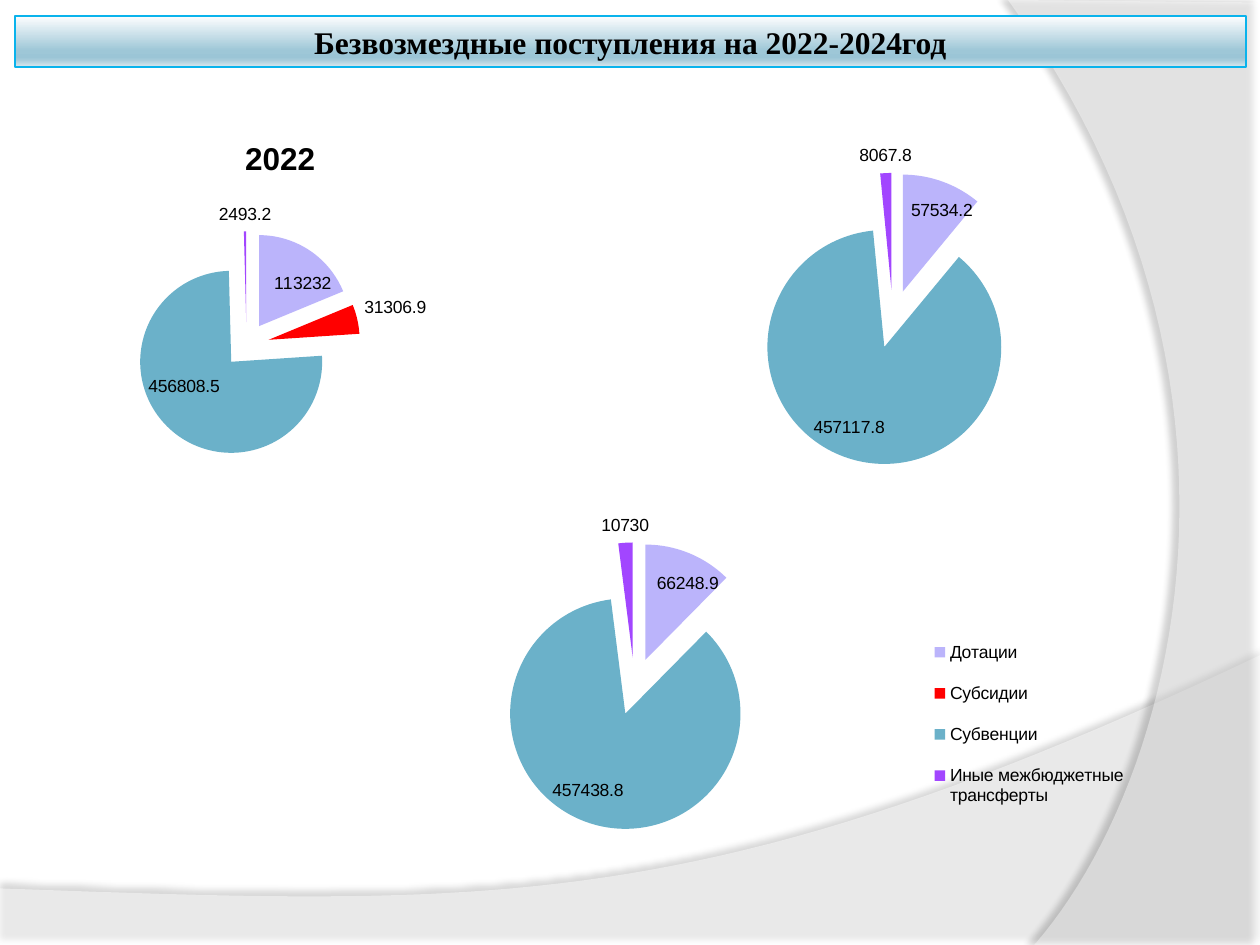
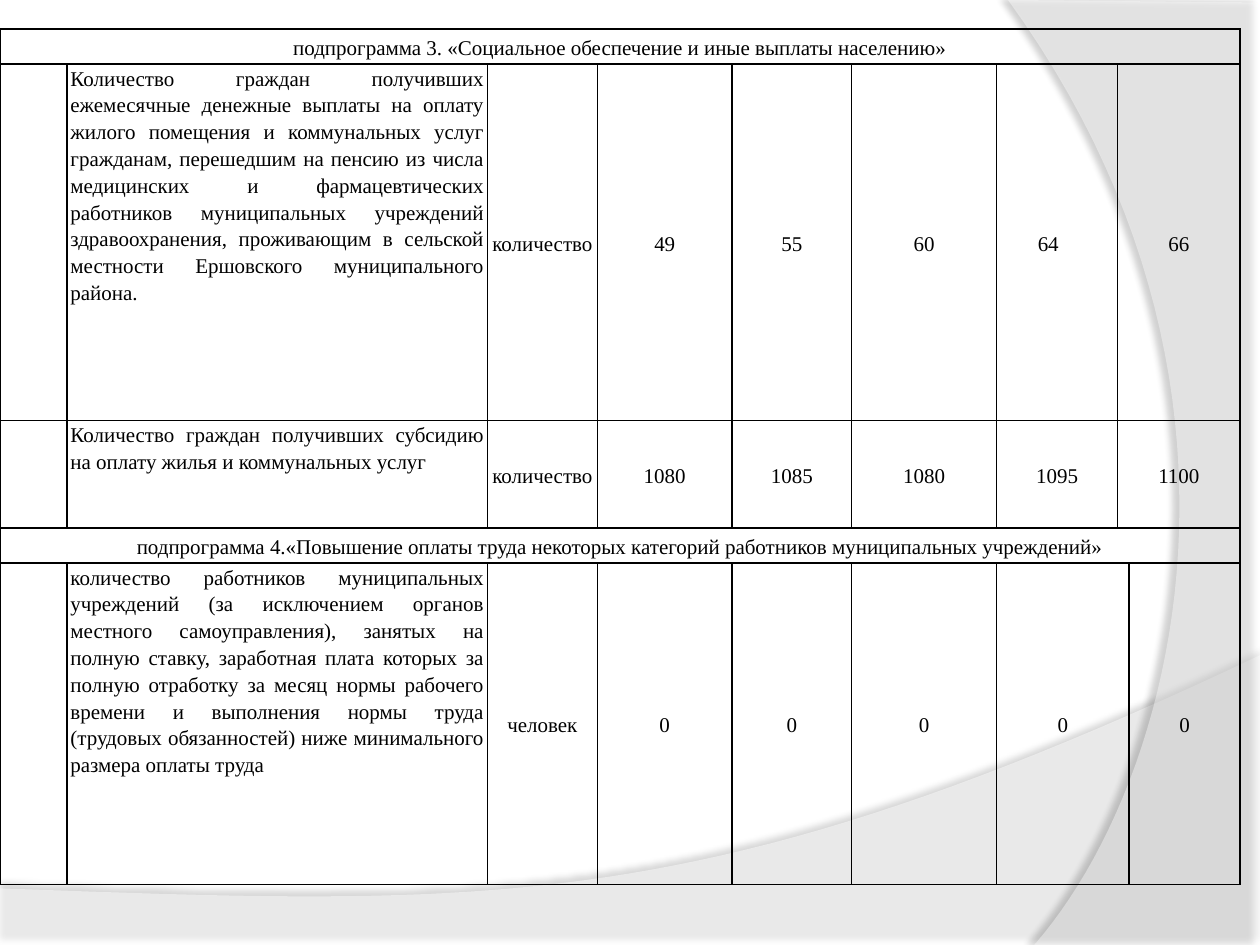
from lxml import etree
from pptx import Presentation
from pptx.chart.data import CategoryChartData
from pptx.dml.color import RGBColor
from pptx.enum.chart import XL_CHART_TYPE as ChartType
from pptx.enum.chart import XL_LABEL_POSITION as LabelPos
from pptx.enum.chart import XL_LEGEND_POSITION as LegendPos
from pptx.enum.text import MSO_ANCHOR as Anchor
from pptx.enum.text import MSO_AUTO_SIZE as AutoSize
from pptx.enum.text import PP_ALIGN as Align
from pptx.oxml import parse_xml
from pptx.oxml.ns import nsdecls, qn
from pptx.util import Cm, Pt

# Shared look
SERIF, SANS = "Times New Roman", "Arial"
BLACK, WHITE, TITLE_LINE = "000000", "FFFFFF", "0AB3EC"
TITLE_STOPS = [(0, "FEFEFF"), (68, "9EC7D7"), (81, "9BC5D6"),
               (86, "A5CAD9"), (100, "DAE8EE")]
SLICE_COLOURS = ["BBB4FB", "FF0000", "6BB1C9", "A246FF"]


def rgb(value):
    return RGBColor.from_string(value)


def style_font(font, name, size, bold=False):
    font.name, font.size, font.bold = name, Pt(size), bold
    font.color.rgb = rgb(BLACK)


# Background waves
def bezier(p0, p1, p2, p3, steps=48):
    """Points along a cubic curve, without its start."""
    points = []
    for i in range(1, steps + 1):
        t = i / steps
        weights = ((1 - t) ** 3, 3 * t * (1 - t) ** 2, 3 * t * t * (1 - t), t ** 3)
        points.append(tuple(sum(w * p[axis] for w, p in zip(weights, (p0, p1, p2, p3)))
                            for axis in (0, 1)))
    return points


def add_wave(prs, s, left, top, corners, curve, opacity, shadow):
    """Outline of corners and one curve, in cm from (left, top), kept on the master."""
    points = [(Cm(x), Cm(y)) for x, y in corners + bezier(corners[-1], *curve)]
    builder = s.shapes.build_freeform(*points[0])
    builder.add_line_segments(points[1:], close=True)
    sp = builder.convert_to_shape(Cm(left), Cm(top))
    sp.fill.solid()
    sp.fill.fore_color.rgb = rgb(WHITE)
    sp.line.fill.background()
    spPr = sp.element.spPr
    colour = spPr.find(qn("a:solidFill")).find(qn("a:srgbClr"))
    etree.SubElement(colour, qn("a:alpha")).set("val", str(opacity * 1000))
    alpha, distance, angle = shadow
    spPr.append(parse_xml(
        f'<a:effectLst {nsdecls("a")}><a:outerShdw blurRad="{Pt(4)}" dist="{Pt(distance)}" '
        f'dir="{angle * 60000}" algn="ctr" rotWithShape="0"><a:srgbClr val="{BLACK}">'
        f'<a:alpha val="{alpha * 1000}"/></a:srgbClr></a:outerShdw></a:effectLst>'))
    tree = prs.slide_master.shapes.element
    sp.element.nvSpPr.cNvPr.id = 100 + len(tree)
    tree.append(sp.element)


def add_background(prs, s):
    add_wave(prs, s, 0, 13.21, [(0, 4.7), (0, 5.86), (25.4, 5.86), (25.4, 0)],
             [(14.2, 5.31), (9.93, 5.05), (0, 4.7)], 45, (35, 3.5, 270))
    add_wave(prs, s, 20.32, 0, [(5.08, 0.05), (5.08, 19.05), (0.53, 19.05)],
             [(3.43, 15.72), (5.54, 7.62), (0, 0)], 40, (45, 4, 180))


# Title band
def format_title(s, text, left, top, width, height):
    title = s.shapes.title
    title.left, title.top, title.width, title.height = map(Cm, (left, top, width, height))
    title.fill.gradient()
    title.fill.gradient_angle = 270
    stops = title.element.spPr.find(qn("a:gradFill")).find(qn("a:gsLst"))
    stops.clear()
    for position, colour in TITLE_STOPS:
        stops.append(parse_xml(f'<a:gs {nsdecls("a")} pos="{position * 1000}">'
                               f'<a:srgbClr val="{colour}"/></a:gs>'))
    title.line.color.rgb = rgb(TITLE_LINE)
    title.line.width = Pt(0.75)
    title.shadow.inherit = False
    tf = title.text_frame
    tf.auto_size, tf.vertical_anchor = AutoSize.NONE, Anchor.MIDDLE
    tf.text = text
    p = tf.paragraphs[0]
    p.alignment = Align.CENTER
    style_font(p.runs[0].font, SERIF, 18, bold=True)


# Pie charts
def manual_layout(x, y, w, h, target=""):
    return parse_xml(
        f'<c:layout {nsdecls("c")}><c:manualLayout>{target}'
        '<c:xMode val="edge"/><c:yMode val="edge"/>'
        f'<c:x val="{x}"/><c:y val="{y}"/><c:w val="{w}"/><c:h val="{h}"/>'
        '</c:manualLayout></c:layout>')


def add_pie(s, box, values, categories=("1", "2", "3", "4"), name="Series 1", title=None):
    data = CategoryChartData()
    data.categories = categories
    data.add_series(name, values)
    chart = s.shapes.add_chart(ChartType.PIE, *map(Cm, box), data).chart
    style_font(chart.font, SANS, 10)
    chart.has_legend = False
    chart.has_title = title is not None
    if title:
        tf = chart.chart_title.text_frame
        tf.text = title
        style_font(tf.paragraphs[0].runs[0].font, SANS, 18, bold=True)
    plot = chart.plots[0]
    plot.vary_by_categories = True
    series = plot.series[0]
    for i, colour in enumerate(SLICE_COLOURS):
        fill = series.points[i].format.fill
        fill.solid()
        fill.fore_color.rgb = rgb(colour)
    explosion = parse_xml(f'<c:explosion {nsdecls("c")} val="25"/>')
    series._element.find(qn("c:tx")).addnext(explosion)
    plot.has_data_labels = True
    labels = plot.data_labels
    labels.show_value = True
    labels.show_percentage = False
    labels.position = LabelPos.BEST_FIT
    style_font(labels.font, SANS, 10)
    return chart


def add_legend(chart):
    """Legend at the right, with fixed places for the legend and the pie."""
    chart.has_legend = True
    chart.legend.position = LegendPos.RIGHT
    chart.legend.include_in_layout = False
    style_font(chart.legend.font, SANS, 10)
    legend = chart.legend._element
    for parent, layout in (
            (legend, manual_layout(0.74, 0.37, 0.23, 0.55)),
            (chart.element.find(qn("c:chart")).find(qn("c:plotArea")),
             manual_layout(0.18, 0.16, 0.54, 0.77, '<c:layoutTarget val="inner"/>'))):
        old = parent.find(qn("c:layout"))
        if old is not None:
            parent.remove(old)
        parent.insert(1 if parent is legend else 0, layout)


def build_receipts_slide(s):
    format_title(s, "Безвозмездные поступления на 2022-2024год", 0.3, 0.32, 24.82, 1.03)
    add_pie(s, (0, 2.39, 11.3, 7.21), (113232, 31306.9, 456808.5, 2493.2),
            name="2022", title="2022")
    add_pie(s, (13.11, 2.59, 10.11, 7.14), (57534.2, 0, 457117.8, 8067.8))
    chart = add_pie(s, (3.96, 9.73, 19.63, 7.54), (66248.9, 0, 457438.8, 10730),
                    ("Дотации", "Субсидии", "Субвенции", "Иные межбюджетные трансферты"))
    add_legend(chart)


# Indicator table
COLUMNS = [1.35, 8.48, 2.21, 2.72, 2.41, 2.92, 2.44, 0.23, 2.24]
ROWS = [0.71, 7.19, 2.16, 0.71, 6.48]
INDICATORS = [
    ["подпрограмма 3. «Социальное обеспечение и иные выплаты населению»"],
    ["", "Количество граждан получивших ежемесячные денежные выплаты на оплату жилого "
     "помещения и коммунальных услуг гражданам, перешедшим на пенсию из числа медицинских "
     "и фармацевтических работников муниципальных учреждений здравоохранения, проживающим "
     "в сельской местности Ершовского муниципального района.",
     "количество", "49", "55", "60", "64", "66"],
    ["", "Количество граждан получивших субсидию на оплату жилья и коммунальных услуг",
     "количество", "1080", "1085", "1080", "1095", "1100"],
    ["подпрограмма 4.«Повышение оплаты труда некоторых категорий работников "
     "муниципальных учреждений»"],
    ["", "количество работников муниципальных учреждений (за исключением органов местного "
     "самоуправления), занятых на полную ставку, заработная плата которых за полную "
     "отработку за месяц нормы рабочего времени и выполнения нормы труда (трудовых "
     "обязанностей) ниже минимального размера оплаты труда",
     "человек", "0", "0", "0", "0", "", "0"],
]
MERGES = [(0, 0, 8), (1, 7, 8), (2, 7, 8), (3, 0, 8), (4, 6, 7)]


def format_cell(cell):
    tcPr = cell._tc.get_or_add_tcPr()
    for side in ("lnL", "lnR", "lnT", "lnB"):
        tcPr.append(parse_xml(f'<a:{side} {nsdecls("a")} w="{Pt(1)}"><a:solidFill>'
                              f'<a:srgbClr val="{BLACK}"/></a:solidFill></a:{side}>'))
    cell.fill.background()
    cell.margin_left = cell.margin_right = Cm(0.07)
    cell.margin_top = cell.margin_bottom = 0


def write_cell(cell, text, alignment, anchor):
    cell.text = text
    cell.vertical_anchor = anchor
    p = cell.text_frame.paragraphs[0]
    p.alignment, p.line_spacing = alignment, 1.15
    style_font(p.runs[0].font, SERIF, 12)


def build_indicators_slide(s, left, top):
    frame = s.shapes.add_table(len(ROWS), len(COLUMNS), Cm(left), Cm(top),
                               Cm(sum(COLUMNS)), Cm(sum(ROWS)))
    table = frame.table
    table.first_row = table.horz_banding = False
    for column, width in zip(table.columns, COLUMNS):
        column.width = Cm(width)
    for row, height in zip(table.rows, ROWS):
        row.height = Cm(height)
    for cell in table.iter_cells():
        format_cell(cell)
    for row, first, last in MERGES:
        table.cell(row, first).merge(table.cell(row, last))
    for r, texts in enumerate(INDICATORS):
        for c, text in enumerate(texts):
            if text and c == 1:
                write_cell(table.cell(r, c), text, Align.JUSTIFY, Anchor.TOP)
            elif text:
                write_cell(table.cell(r, c), text, Align.CENTER, Anchor.MIDDLE)
    # The one value that is set from the left
    shifted = table.cell(1, 6)
    shifted.text_frame.paragraphs[0].alignment = Align.LEFT
    shifted.margin_left = Cm(0.83)


def main():
    prs = Presentation()
    prs.slide_width, prs.slide_height = Cm(25.4), Cm(19.05)
    title_only, blank = prs.slide_layouts[5], prs.slide_layouts[6]
    receipts = prs.slides.add_slide(title_only)
    add_background(prs, receipts)
    build_receipts_slide(receipts)
    build_indicators_slide(prs.slides.add_slide(blank), 0, 0.58)
    prs.save("out.pptx")


if __name__ == "__main__":
    main()
